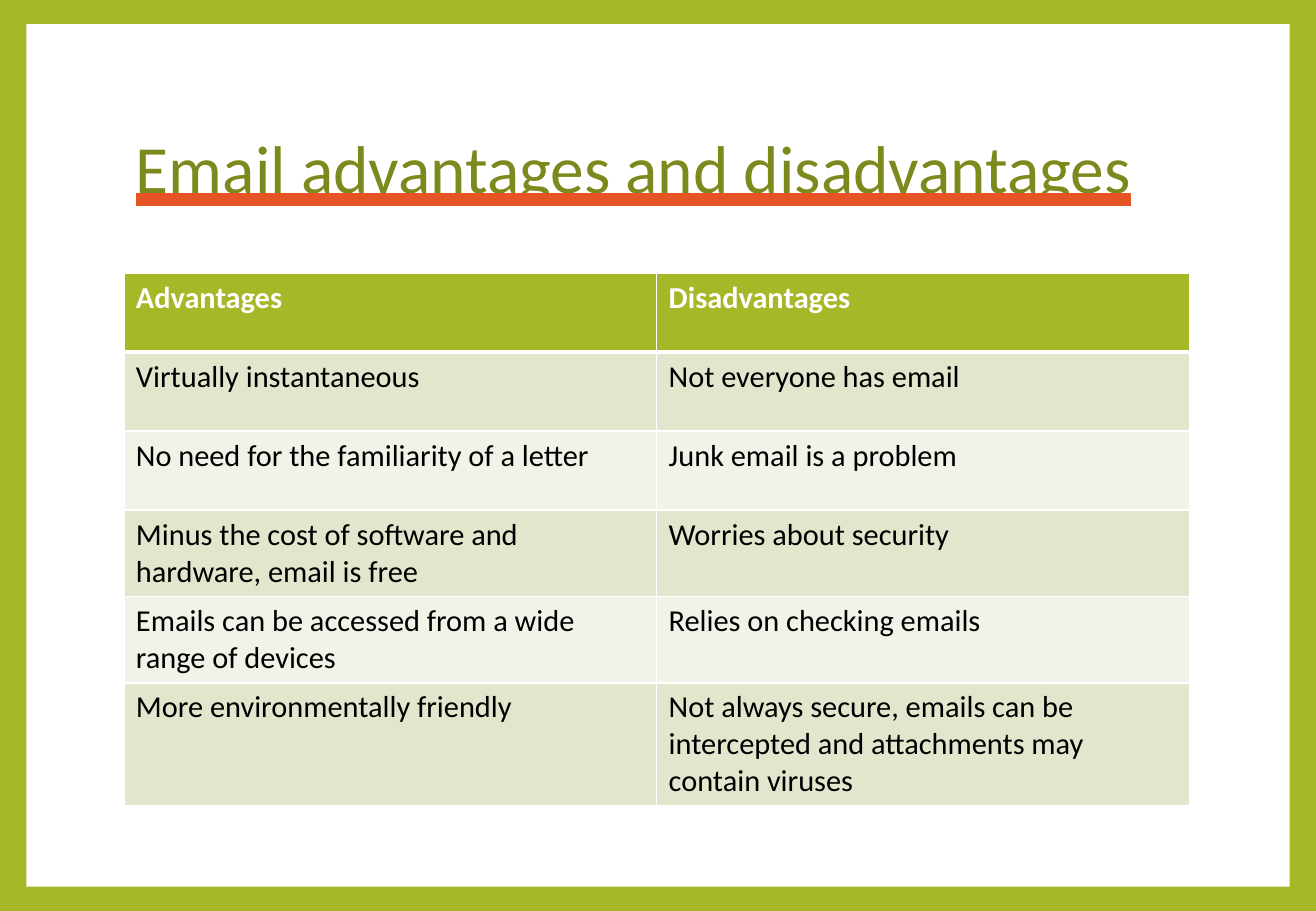
from lxml import etree
from pptx import Presentation
from pptx.dml.color import RGBColor
from pptx.enum import text
from pptx.enum import shapes
from pptx.oxml import ns
from pptx.util import Pt

COLORS = {
    "frame": "A6B727",
    "panel": "FFFFFF",
    "title": "7D891D",
    "underline": "E65425",
    "header": "A6B727",
    "header_text": "FFFFFF",
    "body_text": "000000",
    "odd_row": "E1E6CD",
    "even_row": "F1F3E8",
    "border": "FFFFFF",
}
FONT = "Calibri"
TITLE = "Email advantages and disadvantages"
COMPARISON = [
    ("Advantages", "Disadvantages"),
    ("Virtually instantaneous", "Not everyone has email"),
    ("No need for the familiarity of a letter", "Junk email is a problem"),
    ("Minus the cost of software and hardware, email is free", "Worries about security"),
    ("Emails can be accessed from a wide range of devices", "Relies on checking emails"),
    ("More environmentally friendly",
     "Not always secure, emails can be intercepted and attachments may contain viruses"),
]


def rgb(name):
    """Return the named colour."""
    return RGBColor.from_string(COLORS[name])


def paint(fill, name):
    """Fill an area with the named colour."""
    fill.solid()
    fill.fore_color.rgb = rgb(name)


def style_font(font, color, **formats):
    """Set the colour and the other formats of a font."""
    font.color.rgb = rgb(color)
    for attribute, value in {"name": FONT, **formats}.items():
        setattr(font, attribute, value)


def add_solid(parent, tag, color):
    """Append an element that holds a solid colour fill."""
    element = etree.SubElement(parent, ns.qn(tag))
    solid = etree.SubElement(element, ns.qn("a:solidFill"))
    etree.SubElement(solid, ns.qn("a:srgbClr"), val=COLORS[color])


def draw_frame(slide, box):
    """Colour the background and lay the white panel in the box."""
    paint(slide.background.fill, "frame")
    panel = slide.shapes.add_shape(shapes.MSO_SHAPE.RECTANGLE, *map(Pt, box))
    panel.shadow.inherit = False
    paint(panel.fill, "panel")
    panel.line.fill.background()
    slide.shapes._spTree.insert(2, panel._element)


def write_title(slide, box):
    """Place the heading with its coloured underline in the box."""
    heading = slide.shapes.title
    for side, length in zip(("left", "top", "width", "height"), box):
        setattr(heading, side, Pt(length))
    frame = heading.text_frame
    frame.text = TITLE
    for attribute, value in {"vertical_anchor": text.MSO_ANCHOR.MIDDLE,
                             "auto_size": text.MSO_AUTO_SIZE.NONE,
                             "word_wrap": True}.items():
        setattr(frame, attribute, value)
    paragraph = frame.paragraphs[0]
    paragraph.alignment = text.PP_ALIGN.LEFT
    paragraph.line_spacing = 0.9
    run = paragraph.runs[0]
    style_font(run.font, "title", size=Pt(40),
               underline=text.MSO_UNDERLINE.HEAVY_LINE)
    properties = run._r.get_or_add_rPr()
    add_solid(properties, "a:uFill", "underline")
    properties.find(ns.qn("a:solidFill")).addnext(properties[-1])


def border_cell(cell, widths):
    """Draw the cell borders, with widths in points by side."""
    properties = cell._tc.get_or_add_tcPr()
    for position, (side, width) in enumerate(widths.items()):
        add_solid(properties, f"a:ln{side}", "border")
        line = properties[-1]
        line.set("w", str(Pt(width)))
        properties.insert(position, line)


def build_comparison(slide, box):
    """Fill the box with the two-column comparison."""
    grid = slide.shapes.add_table(len(COMPARISON), 2, *map(Pt, box)).table
    for index, entries in enumerate(COMPARISON):
        is_header = index == 0
        fill = "header" if is_header else "odd_row" if index % 2 else "even_row"
        color = "header_text" if is_header else "body_text"
        widths = {"L": 1, "R": 1, "T": 3 if index == 1 else 1, "B": 3 if is_header else 1}
        for cell, entry in zip(grid.rows[index].cells, entries):
            cell.text = entry
            paint(cell.fill, fill)
            style_font(cell.text_frame.paragraphs[0].runs[0].font, color,
                       size=Pt(18), bold=is_header)
            border_cell(cell, widths)


def main():
    """Build the slide and save it."""
    deck = Presentation()
    deck.slide_width, deck.slide_height = Pt(780), Pt(540)
    slide = deck.slides.add_slide(deck.slide_layouts[5])
    draw_frame(slide, (15.6, 14.4, 748.8, 511.2))
    write_title(slide, (73.4, 48.2, 632.2, 106.6))
    build_comparison(slide, (73.4, 162, 631.6, 280.8))
    deck.save("out.pptx")


if __name__ == "__main__":
    main()
